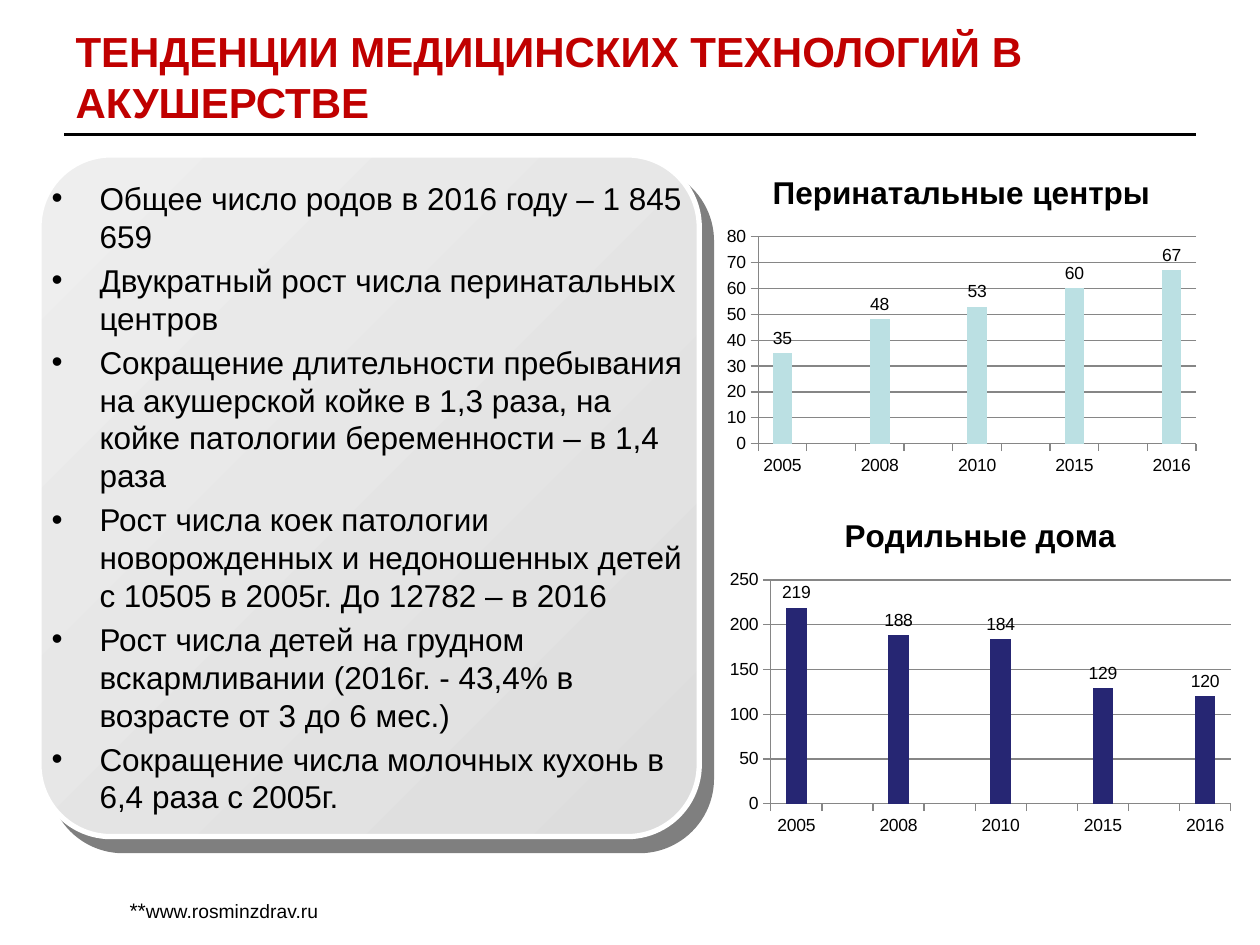
"""Build a slide on trends in obstetric medical technology."""
import lxml.etree
import pptx
import pptx.chart.data
import pptx.dml.color
import pptx.enum.chart
import pptx.enum.shapes
import pptx.enum.text
import pptx.oxml
import pptx.oxml.ns
import pptx.util

Inches = pptx.util.Inches
Pt = pptx.util.Pt
FONT = "Arial"

TITLE = "ТЕНДЕНЦИИ МЕДИЦИНСКИХ ТЕХНОЛОГИЙ В АКУШЕРСТВЕ"
BULLETS = [
    "Общее число родов в 2016 году – 1 845 659",
    "Двукратный рост числа перинатальных центров",
    "Сокращение длительности пребывания на акушерской койке в 1,3 раза, "
    "на койке патологии беременности – в 1,4 раза",
    "Рост числа коек патологии новорожденных и недоношенных детей "
    "с 10505 в 2005г. До 12782 – в 2016",
    "Рост числа детей на грудном вскармливании (2016г. - 43,4% в возрасте от 3 до 6 мес.)",
    "Сокращение числа молочных кухонь в 6,4 раза с 2005г.",
]
FOOTNOTE = [("**", 12), ("www.rosminzdrav.ru", 11)]
CATEGORIES = ["2005", "", "2008", "", "2010", "", "2015", "", "2016"]
CHARTS = [
    ("Перинатальные центры", [35, None, 48, None, 53, None, 60, None, 67],
     "BBE0E3", (5.69, 1.21, 3.88, 2.62)),
    ("Родильные дома", [219, None, 188, None, 184, None, 129, None, 120],
     "262673", (5.71, 3.93, 4.14, 2.76)),
]
SHADOW = (
    '<a:effectLst xmlns:a="http://schemas.openxmlformats.org/drawingml/2006/main">'
    '<a:outerShdw dist="134620" dir="2940000" algn="ctr" rotWithShape="0">'
    '<a:srgbClr val="000000"><a:alpha val="50000"/></a:srgbClr>'
    '</a:outerShdw></a:effectLst>'
)


def rgb(value):
    return pptx.dml.color.RGBColor.from_string(value)


def place(shape, *box):
    shape.left, shape.top, shape.width, shape.height = map(Inches, box)


def style(font, size, color="000000", bold=False):
    font.name, font.size, font.bold = FONT, Pt(size), bold
    font.color.rgb = rgb(color)


def add_title(slide):
    title = slide.shapes.title
    place(title, 0.5, 0.3, 9, 0.61)
    frame = title.text_frame
    frame.text = TITLE
    frame.auto_size = pptx.enum.text.MSO_AUTO_SIZE.NONE
    frame.vertical_anchor = pptx.enum.text.MSO_ANCHOR.MIDDLE
    paragraph = frame.paragraphs[0]
    paragraph.alignment = pptx.enum.text.PP_ALIGN.LEFT
    style(paragraph.font, 24, "C00000", True)

    rule = slide.shapes.add_connector(
        pptx.enum.shapes.MSO_CONNECTOR.STRAIGHT,
        Inches(0.51), Inches(1.07), Inches(9.49), Inches(1.07))
    rule.line.color.rgb = rgb("000000")
    rule.line.width = Pt(1.5)
    lxml.etree.SubElement(rule._element.spPr, pptx.oxml.ns.qn("a:effectLst"))


def add_bullets(slide):
    body = slide.placeholders[1]
    place(body, 0.31, 1.37, 5.24, 5.26)
    frame = body.text_frame
    frame.text = "\n".join(BULLETS)
    frame.auto_size = pptx.enum.text.MSO_AUTO_SIZE.NONE
    for index, paragraph in enumerate(frame.paragraphs):
        properties = paragraph._p.get_or_add_pPr()
        properties.set("marL", str(Inches(0.38)))
        properties.set("indent", str(Inches(-0.38)))
        paragraph.space_before = Pt(3.6 if index else 0)
        style(paragraph.font, 18)

    card = slide.shapes.add_shape(
        pptx.enum.shapes.MSO_SHAPE.ROUNDED_RECTANGLE,
        *map(Inches, (0.31, 1.23, 5.24, 5.41)))
    card.adjustments[0] = 0.109
    card.fill.gradient()
    card.fill.gradient_angle = 315
    for stop, color in zip(card.fill.gradient_stops, ("EEEEEE", "DDDDDD")):
        stop.color.rgb = rgb(color)
    card.line.color.rgb = rgb("FFFFFF")
    card.line.width = Pt(3)
    card._element.spPr.append(pptx.oxml.parse_xml(SHADOW))
    body._element.addprevious(card._element)


def add_column_chart(slide, name, values, color, box):
    data = pptx.chart.data.CategoryChartData()
    data.categories = CATEGORIES
    data.add_series(name, values)
    chart = slide.shapes.add_chart(
        pptx.enum.chart.XL_CHART_TYPE.COLUMN_CLUSTERED, *map(Inches, box), data).chart
    style(chart.font, 10)
    chart.has_legend = False
    chart.has_title = True
    title = chart.chart_title
    title.include_in_layout = False
    title.text_frame.text = name
    style(title.text_frame.paragraphs[0].font, 18, bold=True)

    plot = chart.plots[0]
    plot.gap_width = 150
    plot.vary_by_categories = False
    fill = plot.series[0].format.fill
    fill.solid()
    fill.fore_color.rgb = rgb(color)
    plot.has_data_labels = True
    labels = plot.data_labels
    labels.show_value = True
    labels.position = pptx.enum.chart.XL_LABEL_POSITION.OUTSIDE_END
    style(labels.font, 10)

    chart.value_axis.has_major_gridlines = True
    for axis in (chart.category_axis, chart.value_axis):
        axis.major_tick_mark = pptx.enum.chart.XL_TICK_MARK.OUTSIDE
        style(axis.tick_labels.font, 10)
        axis.format.line.color.rgb = rgb("868686")
    chart.value_axis.major_gridlines.format.line.color.rgb = rgb("868686")


def add_footnote(slide):
    box = slide.shapes.add_textbox(*map(Inches, (0.93, 7.07, 7.56, 0.31)))
    box.text_frame.word_wrap = True
    for text, size in FOOTNOTE:
        run = box.text_frame.paragraphs[0].add_run()
        run.text = text
        style(run.font, size)


def main():
    presentation = pptx.Presentation()
    presentation.slide_width, presentation.slide_height = Inches(10), Inches(7.5)
    slide = presentation.slides.add_slide(presentation.slide_layouts[1])
    add_title(slide)
    add_bullets(slide)
    for chart in CHARTS:
        add_column_chart(slide, *chart)
    add_footnote(slide)
    presentation.save("out.pptx")


if __name__ == "__main__":
    main()
